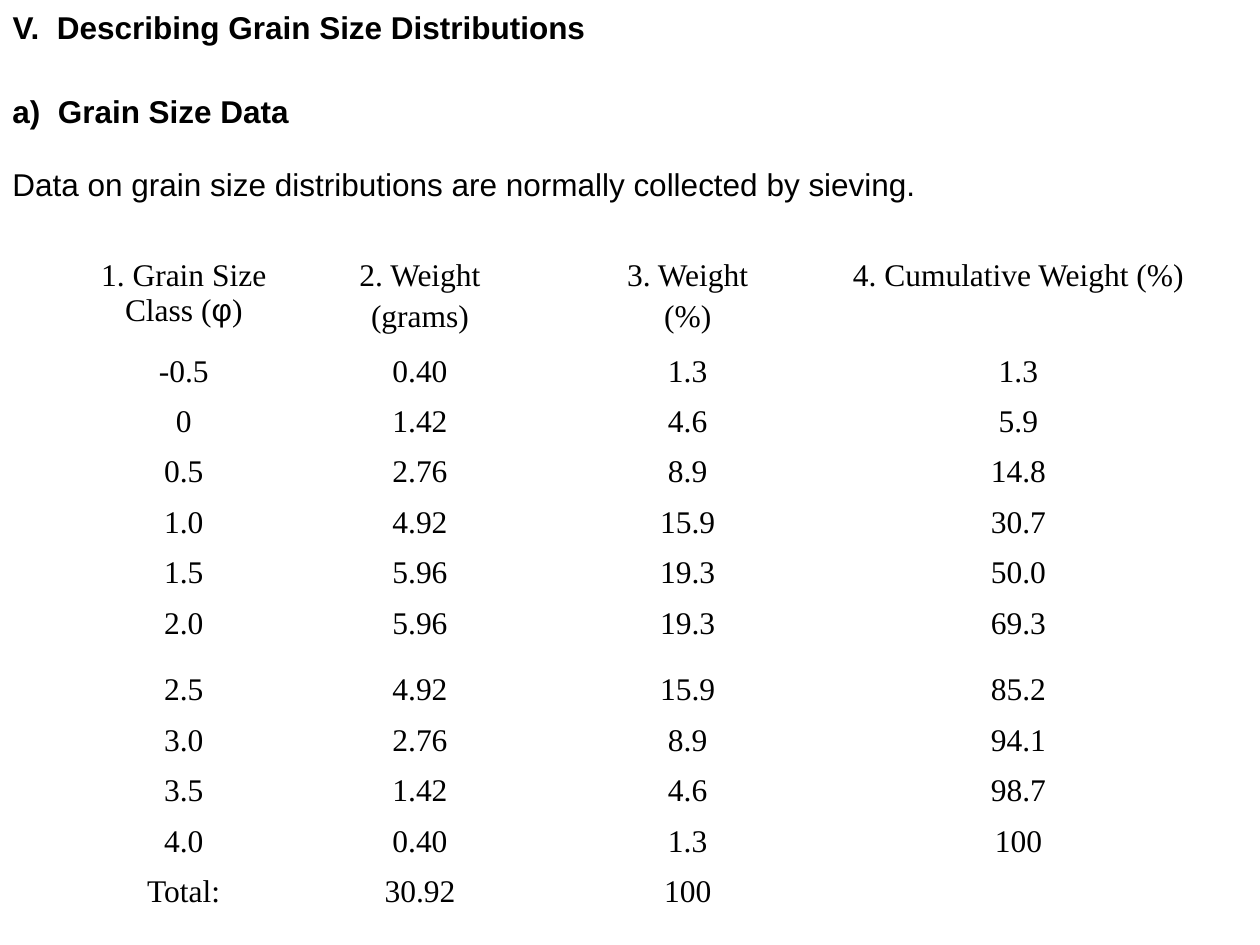
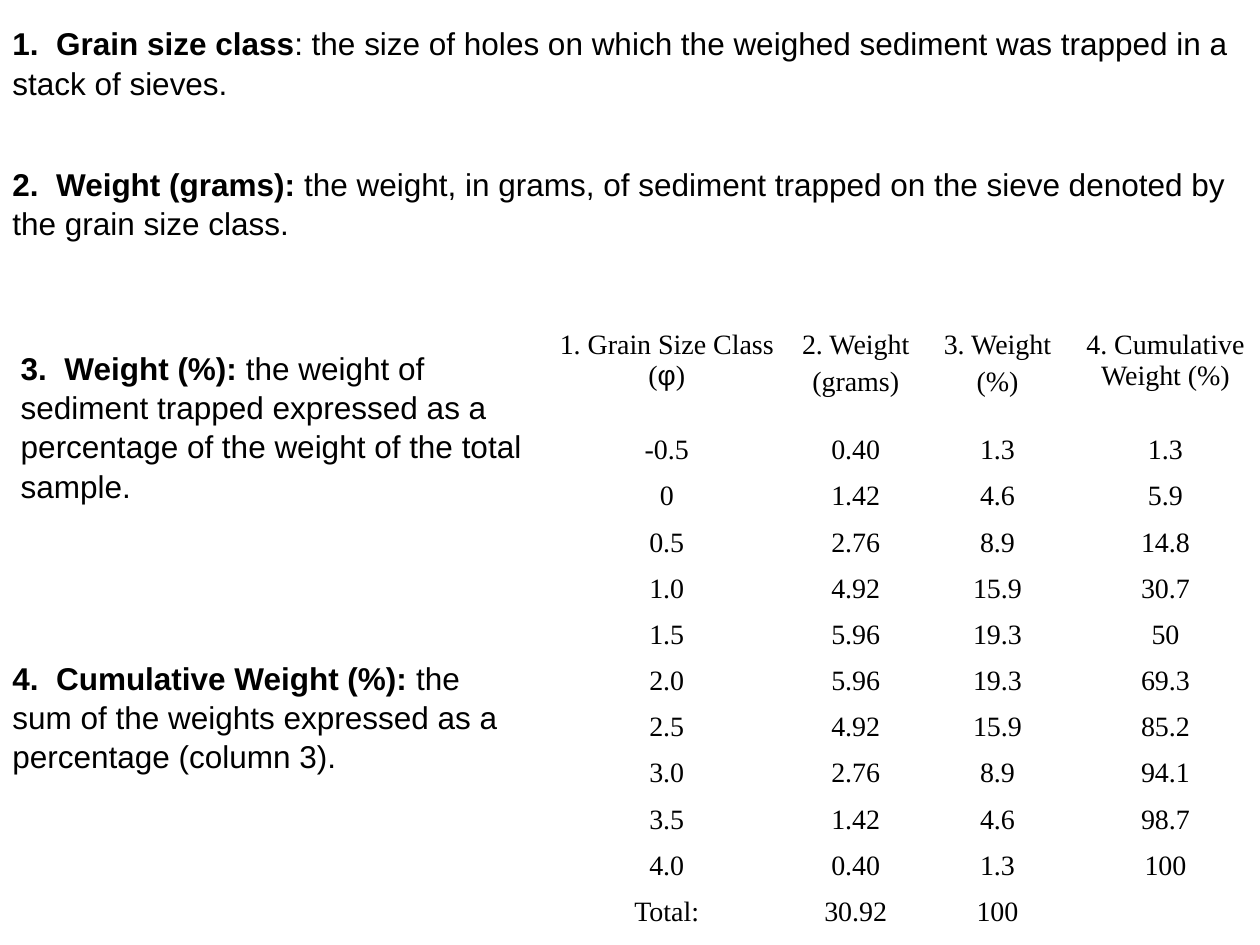
"""Build two slides on describing grain size distributions."""
from dataclasses import dataclass

from pptx import Presentation
from pptx import util as u
from pptx.dml.color import RGBColor
from pptx.enum import text

EMU_PER_PX = 3048
HEADINGS = [
    [["1. Grain Size Class (", "φ", ")"]],
    [["2. Weight"], ["(grams)"]],
    [["3. Weight"], ["(%)"]],
    [["4. Cumulative Weight (%)"]],
]
SIEVES = [
    ("-0.5", "0.40", "1.3", "1.3"),
    ("0", "1.42", "4.6", "5.9"),
    ("0.5", "2.76", "8.9", "14.8"),
    ("1.0", "4.92", "15.9", "30.7"),
    ("1.5", "5.96", "19.3", "50.0"),
    ("2.0", "5.96", "19.3", "69.3"),
    ("2.5", "4.92", "15.9", "85.2"),
    ("3.0", "2.76", "8.9", "94.1"),
    ("3.5", "1.42", "4.6", "98.7"),
    ("4.0", "0.40", "1.3", "100"),
    ("Total:", "30.92", "100", ""),
]
DEFINITIONS = [
    ((0, 40, 3000, 270), "1.  Grain size class",
     ": the size of holes on which the weighed sediment was trapped in a stack of sieves."),
    ((0, 375, 2955, 270), "2.  Weight (grams):",
     " the weight, in grams, of sediment trapped on the sieve denoted by the grain size class."),
    ((20, 812, 1255, 630), "3.  Weight (%):",
     " the weight of sediment trapped expressed as a percentage of the weight of the total sample."),
    ((0, 1550, 1255, 510), "4.  Cumulative Weight (%):",
     " the sum of the weights expressed as a percentage (column 3)."),
]


@dataclass(frozen=True)
class Theme:
    """Colours, fonts and type sizes."""
    ink: RGBColor = RGBColor(0, 0, 0)
    prose: str = "Arial"
    figures: str = "Times New Roman"
    body: int = 18
    compact: int = 16
    leading: float = 1.04
    heading_gap: float = 0.2


def px(length):
    """Turn px into EMU."""
    return u.Emu(length * EMU_PER_PX)


class Deck:
    """Holds the theme and the current slide."""

    def __init__(self, theme):
        """Start an empty presentation."""
        self.theme = theme
        self.show = Presentation()
        self.show.slide_width, self.show.slide_height = px(3000), px(2250)
        self.slide = None

    def add_slide(self, layout):
        """Start a slide on the named layout."""
        self.slide = self.show.slides.add_slide(self.show.slide_layouts.get_by_name(layout))

    def style(self, paragraph, face, size, bold=None):
        """Give a paragraph its font."""
        font = paragraph.font
        font.name, font.size, font.bold = face, u.Pt(size), bold
        font.color.rgb = self.theme.ink

    def prose(self, frame, lead, rest=""):
        """Write a bold lead followed by regular words."""
        frame.word_wrap = True
        frame.auto_size = text.MSO_AUTO_SIZE.NONE
        frame.vertical_anchor = text.MSO_ANCHOR.TOP
        paragraph = frame.paragraphs[0]
        paragraph.alignment = text.PP_ALIGN.LEFT
        paragraph.line_spacing = self.theme.leading
        for words, bold in ((lead, True), (rest, False)):
            if words:
                run = paragraph.add_run()
                run.text, run.font.bold = words, bold
        self.style(paragraph, self.theme.prose, self.theme.body)

    def title(self, box, words):
        """Place and fill the title placeholder."""
        heading = self.slide.shapes.title
        heading.left, heading.top, heading.width, heading.height = map(px, box)
        self.prose(heading.text_frame, words)

    def note(self, box, lead, rest=""):
        """Add a text box."""
        self.prose(self.slide.shapes.add_textbox(*map(px, box)).text_frame, lead, rest)

    def cell(self, cell, lines, size):
        """Fill a table cell with centred lines made of runs."""
        cell.fill.background()
        frame = cell.text_frame
        for index, pieces in enumerate(lines):
            paragraph = frame.add_paragraph() if index else frame.paragraphs[0]
            paragraph.alignment = text.PP_ALIGN.CENTER
            if index:
                paragraph.space_before = u.Pt(size * self.theme.heading_gap)
            for piece in filter(None, pieces):
                run = paragraph.add_run()
                run.text = piece
                if piece == "φ":
                    run.font.name = self.theme.prose
            self.style(paragraph, self.theme.figures, size)

    def sieve_table(self, left, top, widths, heights, rows, size):
        """Add the table of sieve weights."""
        box = (left, top, sum(widths), sum(heights))
        table = self.slide.shapes.add_table(len(heights), len(widths), *map(px, box)).table
        table.first_row = table.horz_banding = False
        for column, width in zip(table.columns, widths):
            column.width = px(width)
        content = [HEADINGS] + [[[[value]] for value in row] for row in rows]
        for row, height, entries in zip(table.rows, heights, content):
            row.height = px(height)
            for cell, lines in zip(row.cells, entries):
                self.cell(cell, lines, size)


def main():
    """Build and save both slides."""
    theme = Theme()
    deck = Deck(theme)

    deck.add_slide("Title Only")
    deck.title((0, 0, 1730, 150), "V.  Describing Grain Size Distributions")
    deck.note((0, 375, 2690, 150), "",
              "Data on grain size distributions are normally collected by sieving.")
    deck.sieve_table(150, 600, (575, 550, 725, 850),
                     [228] + [120] * 5 + [159] + [120] * 5, SIEVES, theme.body)
    deck.note((0, 200, 875, 150), "a)  Grain Size Data")

    deck.add_slide("Blank")
    rounded = [[value.replace("50.0", "50") for value in row] for row in SIEVES]
    deck.sieve_table(1300, 770, (575, 325, 350, 450),
                     [250] + [110] * 11, rounded, theme.compact)
    for box, term, meaning in DEFINITIONS:
        deck.note(box, term, meaning)

    deck.show.save("out.pptx")


if __name__ == "__main__":
    main()
